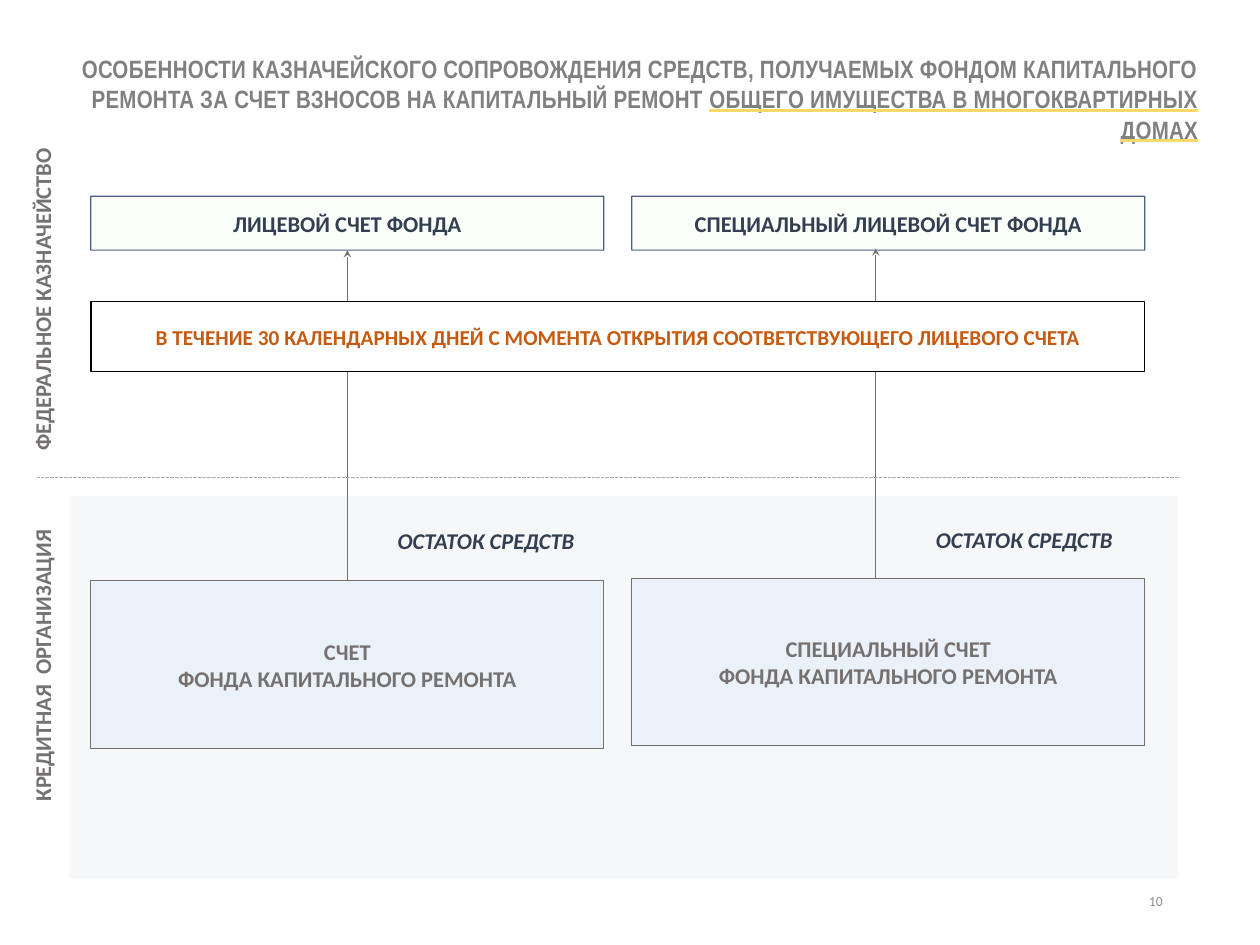
from lxml import etree
from pptx import Presentation
from pptx import util as u
from pptx.dml.color import RGBColor
from pptx.enum import dml, shapes, text
from pptx.oxml.ns import qn

# Grid of 140 columns by 105 rows; a box is (left, top, width, height) in cells.
COLS, ROWS = 140, 105
CELL = u.Inches(0.1)
MARGIN = (1.2, 0.6)

WHITE = RGBColor(0xFF, 0xFF, 0xFF)
BLACK = RGBColor(0x00, 0x00, 0x00)
GRAY = RGBColor(0x76, 0x71, 0x71)
TITLE_GRAY = RGBColor(0x80, 0x80, 0x80)
NUMBER_GRAY = RGBColor(0x8C, 0x8C, 0x8C)
DIVIDER_GRAY = RGBColor(0xAF, 0xAB, 0xAB)
SLATE = RGBColor(0x33, 0x3F, 0x50)
NAVY = RGBColor(0x20, 0x38, 0x64)
ORANGE = RGBColor(0xC5, 0x5A, 0x11)
YELLOW = RGBColor(0xFF, 0xD9, 0x66)
PANEL = RGBColor(0xD6, 0xDC, 0xE5)
PALE_BLUE = RGBColor(0xDE, 0xEB, 0xF7)
PALE_GREEN = RGBColor(0xEF, 0xFF, 0xEF)

LEFT, CENTER, RIGHT = (text.PP_ALIGN.LEFT, text.PP_ALIGN.CENTER,
                       text.PP_ALIGN.RIGHT)
TOP, MIDDLE = text.MSO_ANCHOR.TOP, text.MSO_ANCHOR.MIDDLE


def cells(*values):
    return [u.Emu(round(v * CELL)) for v in values]


def halves(box, gap=3.1):
    """Split a box into two equal columns."""
    x, y, w, h = box
    col = (w - gap) / 2
    return [(x + i * (col + gap), y, col, h) for i in range(2)]


def set_alpha(fill_parent, percent):
    for color in fill_parent.find(qn("a:solidFill")):
        etree.SubElement(color, qn("a:alpha"), val=str(percent * 1000))


def write(sp, lines, size=18, color=GRAY, font="Calibri", bold=True,
          italic=False, align=CENTER, anchor=MIDDLE, margin=MARGIN,
          vert=None):
    """Fill a shape with text, one paragraph per line; return the last one."""
    tf = sp.text_frame
    tf.word_wrap = True
    tf.vertical_anchor = anchor
    tf.margin_left = tf.margin_right = cells(margin[0])[0]
    tf.margin_top = tf.margin_bottom = cells(margin[1])[0]
    if vert:
        tf._txBody.bodyPr.set("vert", vert)
    for i, line in enumerate(lines.split("\n")):
        p = tf.paragraphs[0] if i == 0 else tf.add_paragraph()
        p.alignment = align
        r = p.add_run()
        r.text = line
        f = r.font
        f.name, f.size, f.bold, f.italic = font, u.Pt(size), bold, italic
        f.color.rgb = color
    return p


def add_text(s, box, lines, **fmt):
    sp = s.shapes.add_textbox(*cells(*box))
    return write(sp, lines, **fmt)


def add_rect(s, box, fill, alpha=100, line=None, line_alpha=100):
    sp = s.shapes.add_shape(shapes.MSO_SHAPE.RECTANGLE, *cells(*box))
    sp.shadow.inherit = False
    sp.fill.solid()
    sp.fill.fore_color.rgb = fill
    set_alpha(sp._element.spPr, alpha)
    if line is None:
        sp.line.fill.background()
    else:
        sp.line.color.rgb = line
        sp.line.width = u.Pt(1)
        set_alpha(sp.line._get_or_add_ln(), line_alpha)
    return sp


def add_line(s, start, end, color):
    c = s.shapes.add_connector(shapes.MSO_CONNECTOR.STRAIGHT,
                               *cells(*start, *end))
    c.line.color.rgb = color
    c.line.width = u.Pt(0.5)
    etree.SubElement(c._element.spPr, qn("a:effectLst"))
    return c


def add_arrow(s, start, end):
    c = add_line(s, start, end, GRAY)
    etree.SubElement(c.line._get_or_add_ln(), qn("a:tailEnd"), type="stealth")
    return c


def title(s, box):
    p = add_text(s, box, "ОСОБЕННОСТИ КАЗНАЧЕЙСКОГО СОПРОВОЖДЕНИЯ СРЕДСТВ, "
                 "ПОЛУЧАЕМЫХ ФОНДОМ КАПИТАЛЬНОГО РЕМОНТА ЗА СЧЕТ ВЗНОСОВ "
                 "НА КАПИТАЛЬНЫЙ РЕМОНТ ", size=20, color=TITLE_GRAY,
                 font="Arial Narrow", align=RIGHT, anchor=TOP)
    first = p.runs[0].font
    r = p.add_run()
    r.text = "ОБЩЕГО ИМУЩЕСТВА В МНОГОКВАРТИРНЫХ ДОМАХ"
    f = r.font
    f.name, f.size, f.bold, f.underline = first.name, first.size, True, True
    f.color.rgb = TITLE_GRAY
    for font in (first, f):
        font._element.set("spc", "20")
    under = etree.Element(qn("a:uFill"))
    solid = etree.SubElement(under, qn("a:solidFill"))
    etree.SubElement(solid, qn("a:srgbClr"), val=str(YELLOW))
    f._element.find(qn("a:latin")).addprevious(under)


def side_label(s, box, words):
    add_text(s, box, words, align=RIGHT, anchor=TOP, margin=(1, 0.5),
             vert="vert270")


def ledger_accounts(s, box):
    names = "ЛИЦЕВОЙ СЧЕТ ФОНДА", "СПЕЦИАЛЬНЫЙ ЛИЦЕВОЙ СЧЕТ ФОНДА"
    accounts = []
    for half, name in zip(halves(box), names):
        sp = add_rect(s, half, PALE_GREEN, 30, NAVY, 80)
        write(sp, name, color=SLATE)
        accounts.append(sp)
    return accounts


def bank_accounts(s, box):
    """Place the two bank accounts, each with its balance caption above."""
    names = ("СЧЕТ\nФОНДА КАПИТАЛЬНОГО РЕМОНТА",
             "СПЕЦИАЛЬНЫЙ СЧЕТ\nФОНДА КАПИТАЛЬНОГО РЕМОНТА")
    lifts, caption_shifts = (0, 0.2), (33.1, 32.8)
    accounts = []
    for (x, y, w, h), name, lift, shift in zip(halves(box), names, lifts,
                                               caption_shifts):
        sp = add_rect(s, (x, y - lift, w, h - lift), PALE_BLUE, 44, GRAY)
        write(sp, name)
        add_text(s, (x + shift, y - 6.4 - lift, 24.2, 4), "ОСТАТОК СРЕДСТВ",
                 color=SLATE, italic=True, align=LEFT, anchor=TOP,
                 margin=(1, 0.5))
        accounts.append(sp)
    return accounts


def transfers(s, sources, targets, box):
    """Draw the upward arrows and the deadline bar that crosses them."""
    first = add_arrow(s, (38.6, 64.5), (38.6, 27.8))
    first.begin_connect(sources[0], 0)
    first.end_connect(targets[0], 2)
    add_arrow(s, (97.3, 64.3), (97.3, 27.6))
    bar = add_rect(s, box, WHITE, line=BLACK)
    write(bar, "В ТЕЧЕНИЕ 30 КАЛЕНДАРНЫХ ДНЕЙ С МОМЕНТА ОТКРЫТИЯ "
          "СООТВЕТСТВУЮЩЕГО ЛИЦЕВОГО СЧЕТА", size=17, color=ORANGE)


def main():
    prs = Presentation()
    prs.slide_width, prs.slide_height = cells(COLS, ROWS)
    s = prs.slides.add_slide(prs.slide_layouts[6])
    left, width = 10.1, 117.1

    add_rect(s, (7.7, 55.1, 123.2, 42.5), PANEL, 21)
    title(s, (6.1, 5.4, 128.2, 11.3))
    ledgers = ledger_accounts(s, (left, 21.8, width, 6))
    banks = bank_accounts(s, (left, 64.5, width, 18.7))
    transfers(s, banks, ledgers, (left, 33.5, width, 7.8))
    divider = add_line(s, (4.1, 53), (131, 53), DIVIDER_GRAY)
    divider.line.dash_style = dml.MSO_LINE.ROUND_DOT
    side_label(s, (2.7, 15.5, 5, 37.5), "ФЕДЕРАЛЬНОЕ КАЗНАЧЕЙСТВО")
    side_label(s, (2.7, 57.9, 5, 43.4), "КРЕДИТНАЯ  ОРГАНИЗАЦИЯ")
    add_text(s, (98.9, 97.3, 31.5, 5.6), "10", size=11, color=NUMBER_GRAY,
             bold=False, align=RIGHT)
    prs.save("out.pptx")


if __name__ == "__main__":
    main()
